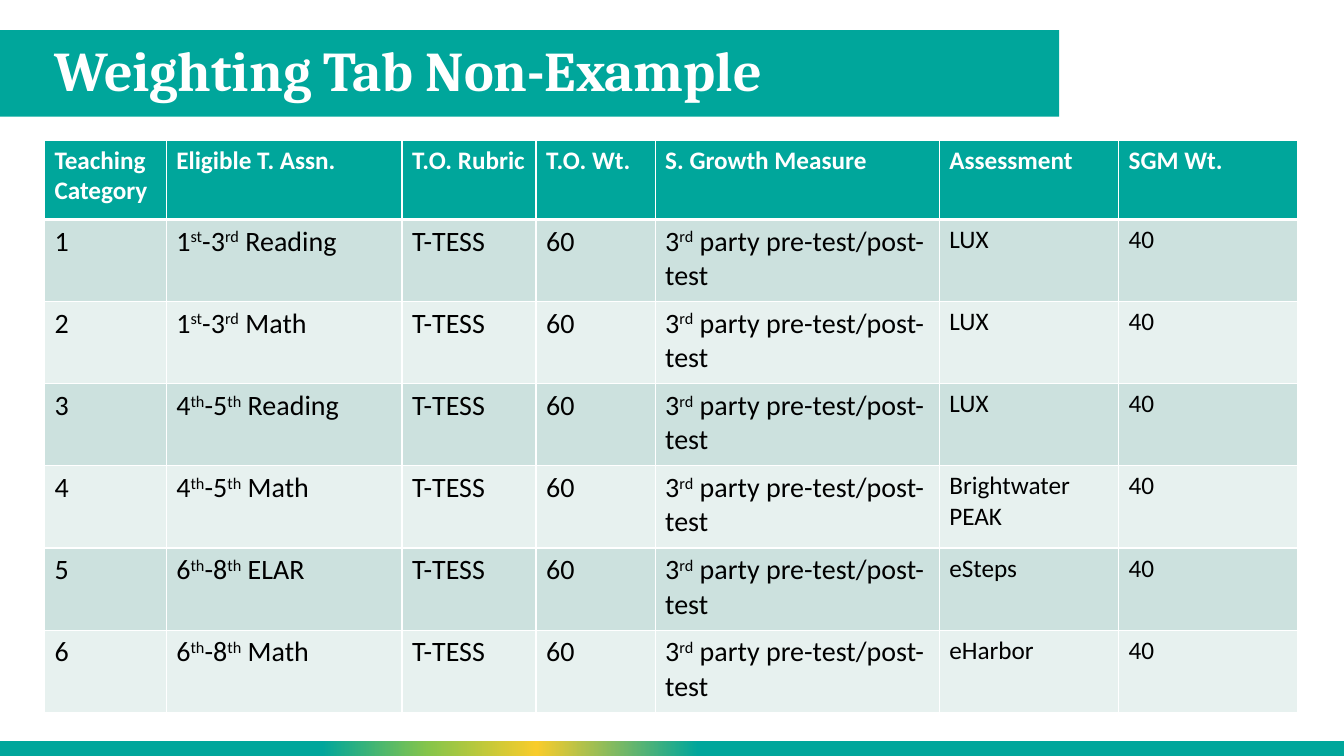
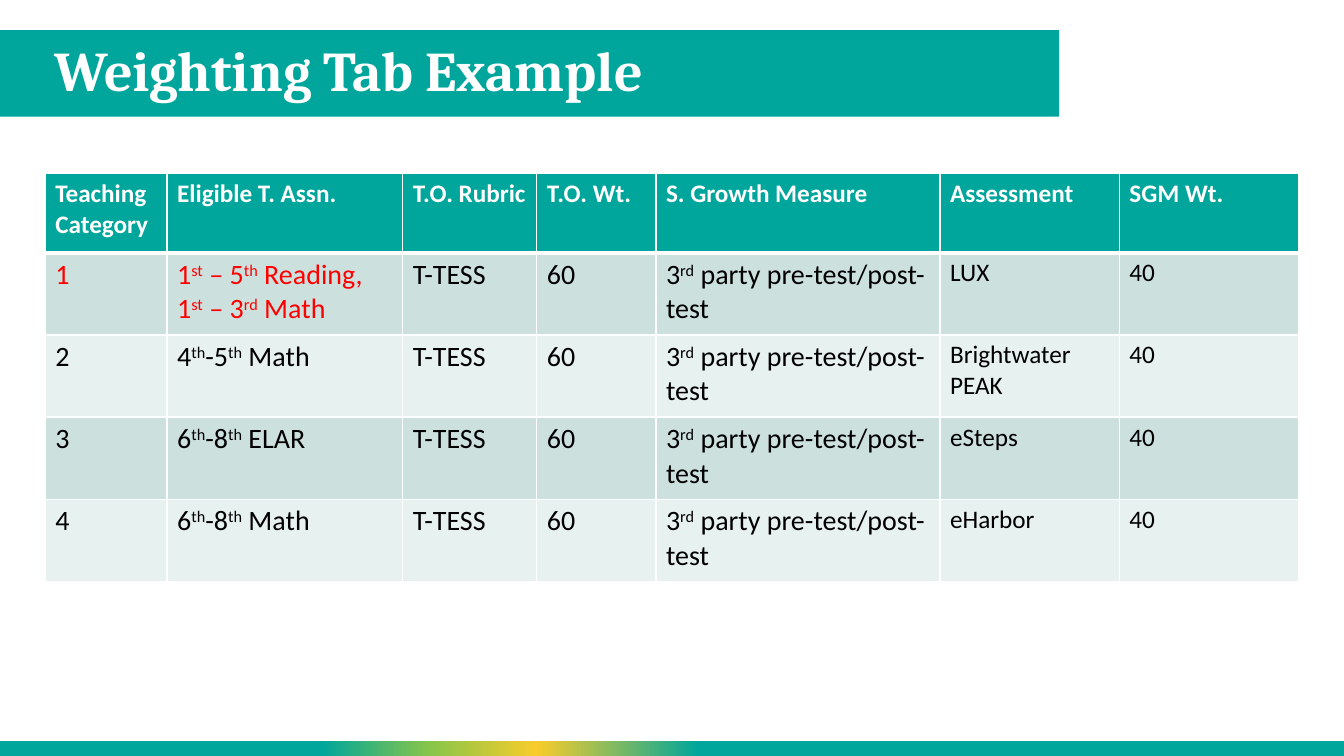
from dataclasses import dataclass

from lxml import etree
from pptx import Presentation
from pptx.dml.color import RGBColor
from pptx.enum.shapes import MSO_SHAPE
from pptx.enum.text import MSO_ANCHOR, MSO_AUTO_SIZE, PP_ALIGN
from pptx.oxml import parse_xml
from pptx.oxml.ns import nsdecls, qn
from pptx.util import Cm, Pt

RECT = MSO_SHAPE.RECTANGLE
MIDDLE = MSO_ANCHOR.MIDDLE
NO_AUTOFIT = MSO_AUTO_SIZE.NONE
LEFT = PP_ALIGN.LEFT
TITLE_ONLY = 5


@dataclass(frozen=True)
class Theme:
    teal: str = "00A69B"
    yellow: str = "F8CC2B"
    green: str = "87C54A"
    bands: tuple = ("CCE1DE", "E7F1EF")
    white: str = "FFFFFF"
    black: str = "000000"
    red: str = "FF0000"
    title_font: str = "Cambria"
    body_font: str = "Calibri"
    title_size: int = 40
    large: int = 20
    small: int = 18


T = Theme()

COL_WIDTHS = (3.07, 5.94, 3.38, 3.0, 7.16, 4.52, 4.52)
HEADER_HEIGHT, ROW_HEIGHT = 2.0, 2.07
THIN, THICK = 1, 3
HEADERS = ("Teaching Category", "Eligible T. Assn.", "T.O. Rubric", "T.O. Wt.",
           "S. Growth Measure", "Assessment", "SGM Wt.")
SMALL_COLS = (HEADERS.index("Assessment"), HEADERS.index("SGM Wt."))

# Text between carets is superscript.
UPPER_GRADES = (("4^th^-5^th^ Math", "Brightwater PEAK"),
                ("6^th^-8^th^ ELAR", "eSteps"),
                ("6^th^-8^th^ Math", "eHarbor"))
SEPARATE = (("1^st^-3^rd^ Reading", "LUX"),
            ("1^st^-3^rd^ Math", "LUX"),
            ("4^th^-5^th^ Reading", "LUX")) + UPPER_GRADES
COMBINED = (("1^st^ – 5^th^ Reading, 1^st^ – 3^rd^ Math", "LUX"),) + UPPER_GRADES


def add_runs(p, text, font, size, color, bold=False):
    """Add text run by run, raising the parts between carets."""
    for i, part in enumerate(text.split("^")):
        if not part:
            continue
        r = p.add_run()
        r.text = part
        r.font.name = font
        r.font.size = Pt(size)
        r.font.bold = bold
        r.font.color.rgb = RGBColor.from_string(color)
        if i % 2:
            r._r.get_or_add_rPr().set("baseline", "30000")


def add_band(slide, left, top, width, height):
    sp = slide.shapes.add_shape(RECT, Cm(left), Cm(top), Cm(width), Cm(height))
    sp.shadow.inherit = False
    sp.line.fill.background()
    sp.fill.solid()
    sp.fill.fore_color.rgb = RGBColor.from_string(T.teal)
    return sp


def set_gradient(sp, stops):
    """Fill a shape with a gradient running from right to left."""
    grad = parse_xml(f'<a:gradFill {nsdecls("a")}><a:gsLst/>'
                     '<a:lin ang="10800000" scaled="0"/></a:gradFill>')
    for percent, color in stops:
        gs = etree.SubElement(grad[0], qn("a:gs"), pos=str(percent * 1000))
        etree.SubElement(gs, qn("a:srgbClr"), val=color)
    props = sp.element.spPr
    props.replace(props.find(qn("a:solidFill")), grad)


def style_layout(layout, slide):
    """Give the layout its bands and title position, drawing through a slide."""
    title_band = add_band(slide, -0.03, 0.76, 26.72, 2.18)
    footer = add_band(slide, -0.03, 18.67, 33.9, 0.38)
    set_gradient(footer, ((0, T.teal), (48, T.teal), (60, T.yellow),
                          (68, T.green), (76, T.teal), (100, T.teal)))
    for i, sp in enumerate((title_band, footer), start=2):
        layout.shapes.element.insert(i, sp.element)
    title = layout.placeholders[0]
    title.left, title.top = Cm(1.12), Cm(0.76)
    title.width, title.height = Cm(25.55), Cm(2.18)


def set_title(slide, text):
    tf = slide.shapes.title.text_frame
    tf.vertical_anchor = MIDDLE
    tf.auto_size = NO_AUTOFIT
    tf.word_wrap = True
    p = tf.paragraphs[0]
    p.alignment = LEFT
    p.line_spacing = 0.9
    add_runs(p, text, T.title_font, T.title_size, T.white, bold=True)


def set_borders(cell, top, bottom):
    props = cell._tc.get_or_add_tcPr()
    widths = (("L", THIN), ("R", THIN), ("T", top), ("B", bottom))
    for i, (side, width) in enumerate(widths):
        props.insert(i, parse_xml(
            f'<a:ln{side} {nsdecls("a")} w="{Pt(width)}"><a:solidFill>'
            f'<a:srgbClr val="{T.white}"/></a:solidFill></a:ln{side}>'))


def fill_cell(cell, text, fill, size, color, bold=False, top=THIN, bottom=THIN):
    cell.fill.solid()
    cell.fill.fore_color.rgb = RGBColor.from_string(fill)
    set_borders(cell, top, bottom)
    add_runs(cell.text_frame.paragraphs[0], text, T.body_font, size, color, bold)


def add_weighting_table(slide, left, top, categories, red_cells=()):
    """Draw one row per category; red_cells holds (row, column) pairs."""
    count = len(categories)
    table = slide.shapes.add_table(
        count + 1, len(HEADERS), Cm(left), Cm(top), Cm(sum(COL_WIDTHS)),
        Cm(HEADER_HEIGHT + count * ROW_HEIGHT)).table
    for column, width in zip(table.columns, COL_WIDTHS):
        column.width = Cm(width)
    for i, row in enumerate(table.rows):
        row.height = Cm(ROW_HEIGHT if i else HEADER_HEIGHT)

    for col, text in enumerate(HEADERS):
        fill_cell(table.cell(0, col), text, T.teal, T.small, T.white,
                  bold=True, bottom=THICK)
    for row, (assignment, assessment) in enumerate(categories, start=1):
        texts = (str(row), assignment, "T-TESS", "60",
                 "3^rd^ party pre-test/post-test", assessment, "40")
        for col, text in enumerate(texts):
            fill_cell(table.cell(row, col), text, T.bands[(row - 1) % 2],
                      T.small if col in SMALL_COLS else T.large,
                      T.red if (row, col) in red_cells else T.black,
                      top=THICK if row == 1 else THIN)


def main():
    prs = Presentation()
    prs.slide_width, prs.slide_height = Cm(33.87), Cm(19.05)
    layout = prs.slide_layouts[TITLE_ONLY]

    non_example = prs.slides.add_slide(layout)
    style_layout(layout, non_example)
    set_title(non_example, "Weighting Tab Non-Example")
    add_weighting_table(non_example, 1.12, 3.53, SEPARATE)

    example = prs.slides.add_slide(layout)
    set_title(example, "Weighting Tab Example")
    add_weighting_table(example, 1.14, 4.37, COMBINED, red_cells=((1, 0), (1, 1)))

    prs.save("out.pptx")


if __name__ == "__main__":
    main()
